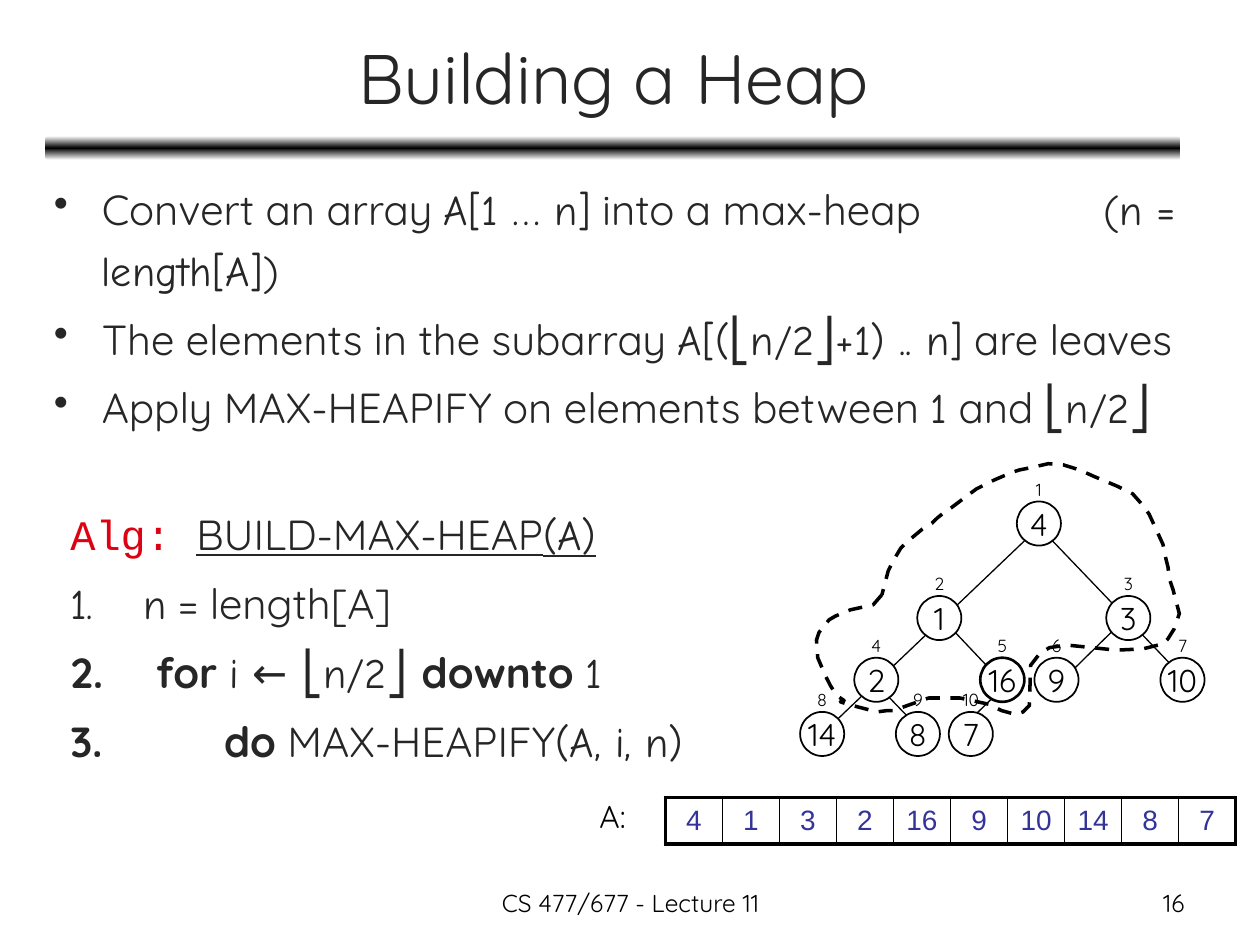
from copy import deepcopy

from lxml.etree import SubElement
from pptx import Presentation
from pptx.dml.color import RGBColor
from pptx.enum.dml import MSO_LINE
from pptx.enum.shapes import MSO_CONNECTOR, MSO_SHAPE
from pptx.enum.text import MSO_ANCHOR, PP_ALIGN
from pptx.oxml.ns import qn
from pptx.util import Pt

SCALE = 9144  # EMU per px, 100 px to the inch
COLORS = {"ink": "262626", "black": "000000", "white": "FFFFFF",
          "red": "DD0111", "value": "333399"}
SANS, COMIC, MONO = "Quicksand", "Comic Neue", "Courier New"
HEAP = [4, 1, 3, 2, 16, 9, 10, 14, 8, 7]
NODE_SIZE = 35
NODE_PLACES = [(807, 398), (728, 473), (878, 473), (678, 522), (778, 522),
               (821, 522), (921, 522), (635, 565), (711, 565), (753, 565)]
EDGES = [(759, 582, 803, 539), (840, 543, 895, 489), (738, 587, 684, 531),
         (797, 543, 744, 487), (948, 547, 814, 407), (653, 582, 828, 415)]
INTERNAL_NODES_OUTLINE = [
    (700, 472), (693, 480), (675, 484), (663, 489), (658, 492), (650, 502),
    (648, 508), (649, 522), (655, 536), (659, 544), (664, 552), (670, 556),
    (667, 557), (673, 559), (696, 565), (704, 564), (709, 564), (720, 560),
    (737, 554), (762, 554), (785, 559), (795, 564), (806, 567), (812, 565),
    (817, 560), (818, 528), (825, 519), (833, 514), (847, 512), (886, 516),
    (907, 515), (923, 511), (927, 507), (932, 499), (934, 493), (936, 487),
    (931, 468), (928, 459), (927, 450), (925, 442), (923, 432), (918, 421),
    (912, 408), (907, 401), (899, 392), (887, 386), (868, 378), (857, 373),
    (844, 369), (832, 368), (819, 371), (809, 373), (803, 375), (789, 381),
    (775, 388), (763, 397), (755, 403), (749, 407), (744, 411), (740, 415),
    (732, 420), (720, 430), (715, 435), (709, 445), (705, 453)]

BULLETS = [
    [("Convert an array ", SANS), ("A[1 … n]", COMIC),
     (" into a max-heap\t(", SANS), ("n = length[A]", COMIC), (")", SANS)],
    [("The elements in the subarray ", SANS),
     ("A[(⎣n/2⎦+1) .. n]", COMIC), (" are leaves", SANS)],
    [("Apply MAX-HEAPIFY on elements between ", SANS), ("1", COMIC),
     (" and ", SANS), ("⎣n/2⎦", COMIC)],
]
ALGORITHM_HEAD = [("Alg: ", MONO), ("BUILD-MAX-HEAP", SANS), ("(A)", COMIC)]
ALGORITHM_STEPS = [
    (58, [("n", COMIC), (" = length[A]", SANS)]),
    (68, [("for ", SANS), ("i ← ⎣n/2⎦ ", COMIC), ("downto ", SANS), ("1", COMIC)]),
    (122, [("do", SANS), (" MAX-HEAPIFY", SANS), ("(A, i, n)", COMIC)]),
]
KEYWORDS = {"for", "downto", "do"}


def px(*lengths):
    return [length * SCALE for length in lengths]


def rgb(name):
    return RGBColor.from_string(COLORS[name])


def set_font(font, size, color="black", name=SANS):
    font.size, font.name = Pt(size), name
    font.color.rgb = rgb(color)


def set_line(line, width):
    line.color.rgb = rgb("black")
    line.width = Pt(width)


def add_textbox(shapes, box, wrap=True):
    frame = shapes.add_textbox(*px(*box)).text_frame
    frame.word_wrap = wrap
    return frame


def add_label(shapes, box, text, size, align, color="black", wrap=True):
    frame = add_textbox(shapes, box, wrap)
    paragraph = frame.paragraphs[0]
    paragraph.text = text
    paragraph.alignment = align
    set_font(paragraph.font, size, color)
    return frame


def add_body_paragraph(frame, runs, indent, bullet=None, tab=None):
    """Add a hanging paragraph; bullet is a mark or a step number."""
    first = frame.paragraphs[0]
    paragraph = frame.add_paragraph() if first.runs else first
    properties = paragraph._p.get_or_add_pPr()
    properties.set("marL", str(indent * SCALE))
    properties.set("indent", str(-indent * SCALE))
    if isinstance(bullet, int):
        SubElement(properties, qn("a:buAutoNum"), type="arabicPeriod", startAt=str(bullet))
    elif bullet:
        SubElement(properties, qn("a:buChar"), char=bullet)
    if tab:
        tabs = SubElement(properties, qn("a:tabLst"))
        SubElement(tabs, qn("a:tab"), pos=str(tab * SCALE), algn="l")
    paragraph.line_spacing = 1.2
    paragraph.space_before = Pt(4.8)
    set_font(paragraph.font, 24, "ink")
    for text, name in runs:
        run = paragraph.add_run()
        run.text = text
        run.font.name = name
        if text.strip() in KEYWORDS:
            run.font.bold = True
    return paragraph


def add_title_rule(shapes):
    rule = shapes.add_shape(MSO_SHAPE.ROUNDED_RECTANGLE, *px(36, 108, 901, 19))
    rule.shadow.inherit = False
    rule.line.fill.background()
    rule.fill.gradient()
    stops = rule._element.spPr.find(qn("a:gradFill")).find(qn("a:gsLst"))
    stops.append(deepcopy(stops[0]))
    for stop, position, color in zip(rule.fill.gradient_stops, (0, 0.5, 1),
                                     ("white", "black", "white")):
        stop.position = position
        stop.color.rgb = rgb(color)
    rule.fill.gradient_angle = 90


def add_edge(shapes, ends):
    edge = shapes.add_connector(MSO_CONNECTOR.STRAIGHT, *px(*ends))
    set_line(edge.line, 0.75)
    SubElement(edge._element.spPr, qn("a:effectLst"))


def add_node(shapes, place, value):
    node = shapes.add_shape(MSO_SHAPE.OVAL, *px(*place, NODE_SIZE, NODE_SIZE))
    node.shadow.inherit = False
    node.fill.solid()
    node.fill.fore_color.rgb = rgb("white")
    set_line(node.line, 1.5 if value == 16 else 1)
    frame = node.text_frame
    frame.word_wrap = False
    frame.vertical_anchor = MSO_ANCHOR.MIDDLE
    paragraph = frame.paragraphs[0]
    paragraph.text = str(value)
    paragraph.alignment = PP_ALIGN.CENTER
    set_font(paragraph.font, 18)


def add_heap_tree(slide):
    shapes = slide.shapes.add_group_shape().shapes
    for ends in EDGES:
        add_edge(shapes, ends)
    for place, value in zip(NODE_PLACES, HEAP):
        add_node(shapes, place, value)
    for index, (left, top) in enumerate(NODE_PLACES, 1):
        add_label(shapes, (left, top - 23, NODE_SIZE, 27), str(index), 10,
                  PP_ALIGN.CENTER, wrap=False)


def set_border(cell, side, width):
    border = SubElement(cell._tc.get_or_add_tcPr(), qn(f"a:{side}"), w=str(Pt(width)))
    fill = SubElement(border, qn("a:solidFill"))
    SubElement(fill, qn("a:srgbClr"), val=COLORS["black"])


def add_array_table(shapes):
    table = shapes.add_table(1, len(HEAP), *px(528, 633, 453, 37)).table
    table.first_row = table.horz_banding = False
    last = len(HEAP) - 1
    for index, value in enumerate(HEAP):
        cell = table.cell(0, index)
        cell.vertical_anchor = MSO_ANCHOR.MIDDLE
        set_border(cell, "lnL", 2.25 if index == 0 else 1)
        set_border(cell, "lnR", 2.25 if index == last else 1)
        set_border(cell, "lnT", 2.25)
        set_border(cell, "lnB", 2.25)
        cell.fill.solid()
        cell.fill.fore_color.rgb = rgb("white")
        paragraph = cell.text_frame.paragraphs[0]
        paragraph.text = str(value)
        paragraph.alignment = PP_ALIGN.CENTER
        set_font(paragraph.font, 16, "value", "Arial")


def add_internal_nodes_outline(shapes):
    start, *others = INTERNAL_NODES_OUTLINE
    builder = shapes.build_freeform(*start, scale=SCALE)
    builder.add_line_segments(others, close=True)
    outline = builder.convert_to_shape()
    outline.shadow.inherit = False
    outline.fill.background()
    set_line(outline.line, 2)
    outline.line.dash_style = MSO_LINE.DASH


def main():
    presentation = Presentation()
    presentation.slide_width, presentation.slide_height = px(1000, 750)
    slide = presentation.slides.add_slide(presentation.slide_layouts[6])
    shapes = slide.shapes

    add_title_rule(shapes)
    title = add_label(shapes, (37, 11, 900, 99), "Building a Heap", 40, PP_ALIGN.CENTER, "ink")
    title.vertical_anchor = MSO_ANCHOR.MIDDLE

    algorithm = add_textbox(shapes, (46, 391, 583, 242))
    head = add_body_paragraph(algorithm, ALGORITHM_HEAD, 58)
    head.runs[0].font.color.rgb = rgb("red")
    for run in head.runs[1:]:
        run.font.underline = True
    for number, (indent, runs) in enumerate(ALGORITHM_STEPS, 1):
        add_body_paragraph(algorithm, runs, indent, number)

    body = add_textbox(shapes, (33, 133, 957, 300))
    for runs in BULLETS:
        has_tab = any("\t" in text for text, _ in runs)
        add_body_paragraph(body, runs, 38, "•", 833 if has_tab else None)

    add_heap_tree(slide)
    add_array_table(shapes)
    add_label(shapes, (466, 628, 46, 40), "A:", 18, PP_ALIGN.LEFT, wrap=False)
    add_internal_nodes_outline(shapes)
    add_label(shapes, (342, 700, 317, 35), "CS 477/677 - Lecture 11", 14, PP_ALIGN.CENTER)
    add_label(shapes, (717, 700, 233, 35), "16", 14, PP_ALIGN.RIGHT)
    presentation.save("out.pptx")


if __name__ == "__main__":
    main()
